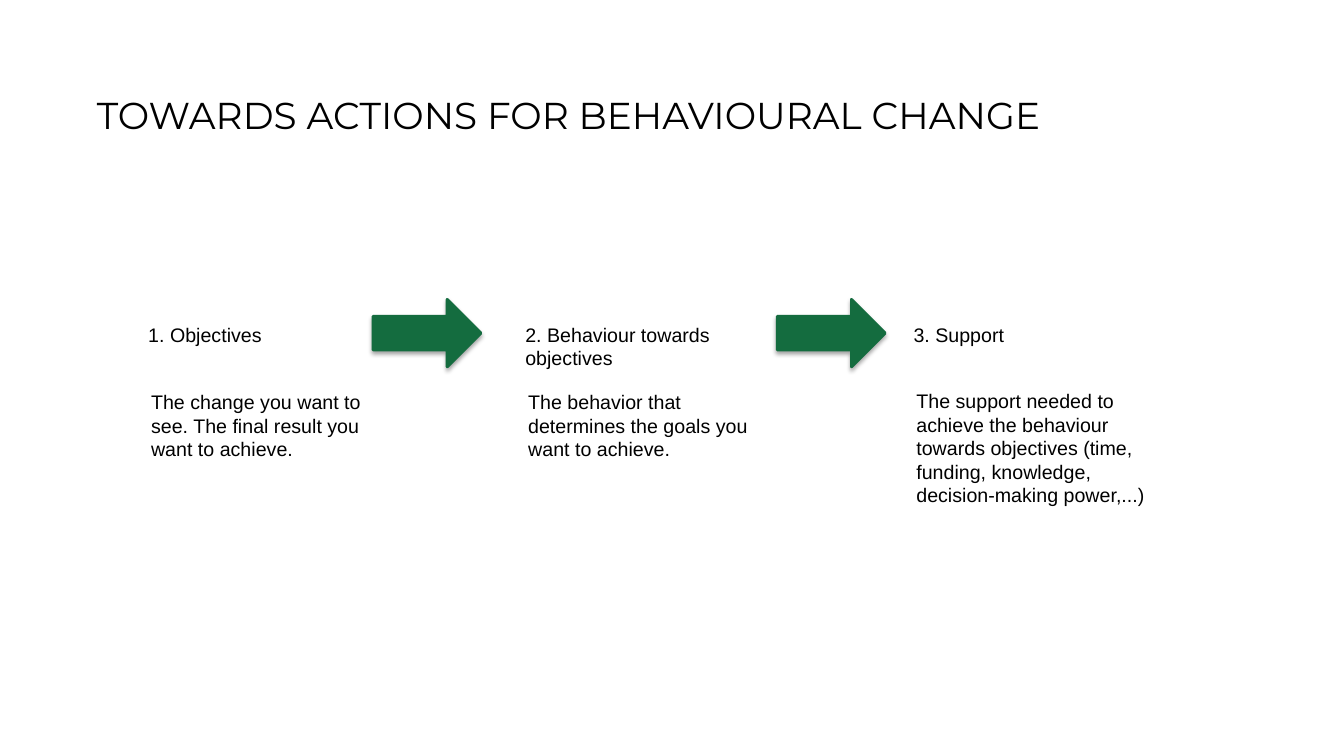
from pptx import Presentation
from pptx.dml.color import RGBColor
from pptx.enum.shapes import MSO_SHAPE as Shape
from pptx.enum.text import MSO_ANCHOR as Anchor
from pptx.util import Inches, Pt

COLORS = {"text": "000000", "arrow": "146C3F", "background": "FFFFFF"}
TITLE = "TOWARDS ACTIONS FOR BEHAVIOURAL CHANGE"
STEPS = [
    {"left": 1.4, "heading": "1. Objectives", "heading_size": (1.72, 0.34),
     "body": "The change you want to see. The final result you want to achieve.",
     "body_top": 3.82, "body_size": (2.41, 1.51)},
    {"left": 5.14, "heading": "2. Behaviour towards objectives", "heading_size": (2.25, 0.57),
     "body": "The behavior that determines the goals you want to achieve.",
     "body_top": 3.82, "body_size": (2.58, 1.75)},
    {"left": 8.99, "heading": "3. Support", "heading_size": (1.92, 0.34),
     "body": "The support needed to achieve the behaviour towards objectives "
             "(time, funding, knowledge, decision-making power,...)",
     "body_top": 3.81, "body_size": (2.65, 1.28)},
]
HEADING_TOP = 3.15
ARROW_LEFTS = (3.7, 7.71)
ARROW_TOP, ARROW_WIDTH, ARROW_HEIGHT = 2.97, 1.07, 0.67


def color(name):
    return RGBColor.from_string(COLORS[name])


def add_text(slide, text, left, top, size, insets, font_name="Arial", font_size=14):
    box = slide.shapes.add_textbox(*map(Inches, (left, top, *size)))
    frame = box.text_frame
    frame.word_wrap = True
    frame.vertical_anchor = Anchor.TOP
    frame.margin_left = frame.margin_right = Inches(insets[0])
    frame.margin_top = frame.margin_bottom = Inches(insets[1])
    frame.text = text
    font = frame.paragraphs[0].runs[0].font
    font.name = font_name
    font.size = Pt(font_size)
    font.color.rgb = color("text")


def add_arrow(slide, left):
    arrow = slide.shapes.add_shape(
        Shape.RIGHT_ARROW, *map(Inches, (left, ARROW_TOP, ARROW_WIDTH, ARROW_HEIGHT)))
    arrow.fill.solid()
    arrow.fill.fore_color.rgb = color("arrow")
    arrow.line.color.rgb = color("arrow")
    arrow.line.width = Pt(2)


def main():
    presentation = Presentation()
    presentation.slide_width = Inches(13.33)
    presentation.slide_height = Inches(7.5)
    slide = presentation.slides.add_slide(presentation.slide_layouts[6])
    slide.background.fill.solid()
    slide.background.fill.fore_color.rgb = color("background")

    add_text(slide, TITLE, 0.83, 0.78, (11.28, 1.17), (0.13, 0.13), "Montserrat", 26.7)
    for step in STEPS:
        add_text(slide, step["heading"], step["left"], HEADING_TOP,
                 step["heading_size"], (0.07, 0.05))
        add_text(slide, step["body"], step["left"], step["body_top"],
                 step["body_size"], (0.1, 0.05))
    for left in ARROW_LEFTS:
        add_arrow(slide, left)

    presentation.save("out.pptx")


if __name__ == "__main__":
    main()
